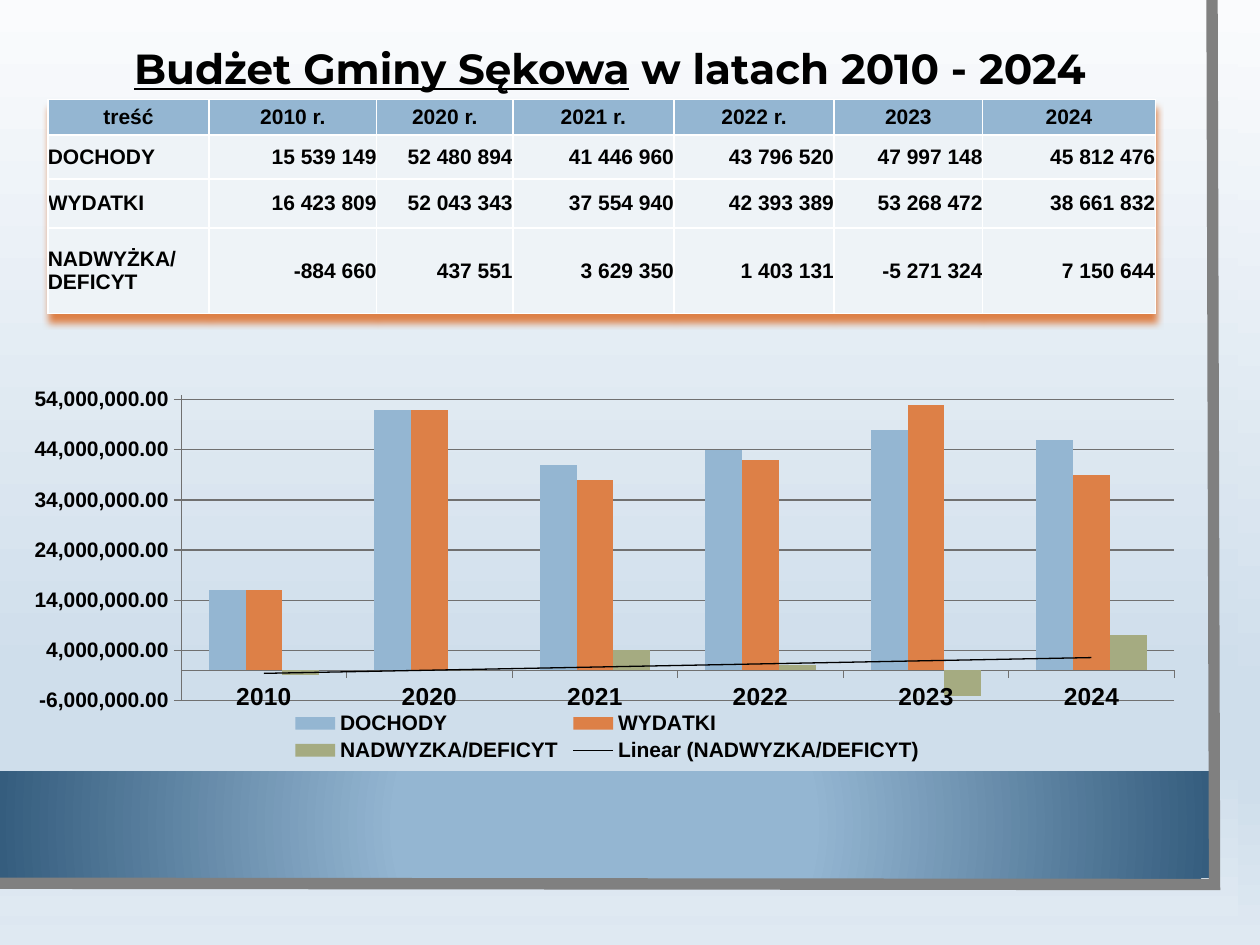
import dataclasses
import pptx
import pptx.chart.data
import pptx.dml.color
import pptx.enum.chart
import pptx.enum.shapes
import pptx.enum.text
import pptx.oxml
import pptx.oxml.ns
import pptx.util

Inches, Pt = pptx.util.Inches, pptx.util.Pt
Align = pptx.enum.text.PP_ALIGN
qn = pptx.oxml.ns.qn


@dataclasses.dataclass(frozen=True)
class Theme:
    sky: tuple = ((0, "FAFBFD"), (74, "CFDEEB"), (83, "CFDEEB"), (100, "DFE9F2"))
    band: tuple = ((0, "94B6D2"), (34, "94B6D2"), (100, "355D7E"))
    bars: tuple = ("94B6D2", "DD8047", "A5AB81")
    head: str = "94B6D2"
    body: str = "EEF3F7"
    glow: str = "DD8047"
    frame: str = "808080"
    grid: str = "707070"
    rule: str = "FFFFFF"
    ink: str = "000000"
    font: str = "Arial"
    title_font: str = "Montserrat"
    title: int = 24
    years: int = 14
    text: int = 12


THEME = Theme()
HEADS = ("treść", "2010 r.", "2020 r.", "2021 r.", "2022 r.", "2023", "2024")
YEARS = ("2010", "2020", "2021", "2022", "2023", "2024")
BUDGET = (
    ("DOCHODY", (15539149, 52480894, 41446960, 43796520, 47997148, 45812476)),
    ("WYDATKI", (16423809, 52043343, 37554940, 42393389, 53268472, 38661832)),
    ("NADWYŻKA/ DEFICYT", (-884660, 437551, 3629350, 1403131, -5271324, 7150644)),
)


def rgb(code):
    return pptx.dml.color.RGBColor.from_string(code)


def node(tag, body, attrs=""):
    """Make one XML element in the drawing or chart namespace."""
    spaces = pptx.oxml.ns.nsdecls("a", "c")
    return pptx.oxml.parse_xml(f"<{tag} {spaces} {attrs}>{body}</{tag}>")


def solid(code):
    return f'<a:solidFill><a:srgbClr val="{code}"/></a:solidFill>'


def style(font, size, name=THEME.font):
    font.name, font.size, font.bold = name, Pt(size), True
    font.color.rgb = rgb(THEME.ink)


def blend(fill, root, stops, shade):
    """Give a fill its gradient stops and its direction."""
    fill.gradient()
    grad = next(root.iter(qn("a:gradFill")))
    for child in list(grad):
        grad.remove(child)
    marks = "".join(f'<a:gs pos="{at * 1000}"><a:srgbClr val="{code}"/></a:gs>'
                    for at, code in stops)
    grad.append(node("a:gsLst", marks))
    grad.append(shade)


def down():
    return node("a:lin", "", 'ang="5400000" scaled="0"')


def panel(slide, box, stops, shade):
    kind = pptx.enum.shapes.MSO_SHAPE.RECTANGLE
    shape = slide.shapes.add_shape(kind, *box)
    shape.shadow.inherit = False
    shape.line.fill.background()
    blend(shape.fill, shape._element, stops, shade)


def backdrop(slide, box):
    left, top, width, height = box
    blend(slide.background.fill, slide._element, THEME.sky, down())
    panel(slide, (left, top, width - Inches(0.17), height - Inches(0.23)),
          THEME.sky, down())

    # Blue band along the foot
    ring = '<a:fillToRect l="50000" t="50000" r="50000" b="50000"/>'
    panel(slide, (left, top + Inches(6.12), Inches(9.6), Inches(0.85)),
          THEME.band, node("a:path", ring, 'path="circle"'))

    # Grey edge on the right and bottom
    right, base = left + Inches(9.62), top + Inches(7.02)
    path = slide.shapes.build_freeform(right, top)
    path.add_line_segments([(right + Inches(0.02), base),
                            (left - Inches(0.02), base - Inches(0.01))], close=False)
    edge = path.convert_to_shape()
    edge.shadow.inherit = False
    edge.fill.background()
    edge.line.color.rgb = rgb(THEME.frame)
    edge.line.width = Pt(6.5)
    line = next(edge._element.iter(qn("a:ln")))
    line.append(node("a:miter", "", 'lim="800000"'))


def heading(slide, box):
    frame = slide.shapes.add_textbox(*box).text_frame
    frame.word_wrap = True
    para = frame.paragraphs[0]
    para.alignment = Align.CENTER
    for text, lined in (("Budżet Gminy Sękowa", True), (" w latach 2010 - 2024", False)):
        run = para.add_run()
        run.text = text
        style(run.font, THEME.title, THEME.title_font)
        run.font.underline = lined


def dress(cell, text, fill, align):
    cell.margin_left = cell.margin_right = cell.margin_top = cell.margin_bottom = 0
    cell.vertical_anchor = pptx.enum.text.MSO_ANCHOR.MIDDLE
    cell.fill.solid()
    cell.fill.fore_color.rgb = rgb(fill)
    cell.text_frame.text = text
    para = cell.text_frame.paragraphs[0]
    para.alignment = align
    style(para.runs[0].font, THEME.text)
    props = cell._tc.get_or_add_tcPr()
    for spot, side in enumerate("LRTB"):
        props.insert(spot, node(f"a:ln{side}", solid(THEME.rule), 'w="12700"'))


def ledger(slide, box):
    rows = [HEADS] + [(name, *(f"{n:,}".replace(",", " ") for n in sums))
                      for name, sums in BUDGET]
    table = slide.shapes.add_table(len(rows), len(HEADS), *box).table
    table.horz_banding = False
    for col, width in zip(table.columns, (1.28, 1.33, 1.08, 1.28, 1.27, 1.18, 1.37)):
        col.width = Inches(width)
    for row, height in zip(table.rows, (0.28, 0.35, 0.39, 0.68)):
        row.height = Inches(height)
    for r, row in enumerate(rows):
        for c, text in enumerate(row):
            align = Align.CENTER if r == 0 else Align.RIGHT if c else Align.LEFT
            dress(table.cell(r, c), text, THEME.body if r else THEME.head, align)

    # Orange shadow under the table
    glow = (f'<a:outerShdw blurRad="50800" dist="50800" dir="5400000">'
            f'<a:srgbClr val="{THEME.glow}"/></a:outerShdw>')
    table._tbl.tblPr.insert(0, node("a:effectLst", glow))


def layout(x, y, wide, high, inner=False):
    """Make a manual layout from percentages of the chart's size."""
    target = '<c:layoutTarget val="inner"/>' if inner else ""
    modes = '<c:xMode val="edge"/><c:yMode val="edge"/>'
    spots = "".join(f'<c:{key} val="{val / 100:.3f}"/>'
                    for key, val in zip("xywh", (x, y, wide, high)))
    return node("c:layout", f"<c:manualLayout>{target}{modes}{spots}</c:manualLayout>")


def place(part, after, rule):
    """Set a manual layout, after the named child if there is one."""
    for old in part.findall(qn("c:layout")):
        part.remove(old)
    mark = part.find(qn(after)) if after else None
    part.insert(0 if mark is None else part.index(mark) + 1, rule)


def graph(slide, box):
    data = pptx.chart.data.CategoryChartData(number_format="#,##0.00")
    data.categories = YEARS
    for name, sums in BUDGET:
        data.add_series(name.replace("Ż", "Z").replace(" ", ""),
                        [round(n, -6) for n in sums])
    kind = pptx.enum.chart.XL_CHART_TYPE.COLUMN_CLUSTERED
    chart = slide.shapes.add_chart(kind, *box, data).chart
    chart.has_title = False
    style(chart.font, THEME.text)

    # Columns
    plot = chart.plots[0]
    plot.gap_width, plot.overlap, plot.vary_by_categories = 150, 0, False
    for bar, code in zip(plot.series, THEME.bars):
        bar.invert_if_negative = False
        bar.format.fill.solid()
        bar.format.fill.fore_color.rgb = rgb(code)

    # Trend of the balance
    trend = (f'<c:spPr><a:ln w="9525">{solid(THEME.ink)}</a:ln></c:spPr>'
             '<c:trendlineType val="linear"/><c:dispRSqr val="0"/><c:dispEq val="0"/>')
    last = plot.series[-1]._element
    last.find(qn("c:cat")).addprevious(node("c:trendline", trend))

    # Axes
    years, sums = chart.category_axis, chart.value_axis
    for axis, size in ((years, THEME.years), (sums, THEME.text)):
        style(axis.tick_labels.font, size)
        axis.major_tick_mark = pptx.enum.chart.XL_TICK_MARK.OUTSIDE
        axis.format.line.color.rgb = rgb(THEME.grid)
    sums.minimum_scale, sums.maximum_scale, sums.major_unit = -6e6, 55e6, 10e6
    sums.tick_labels.number_format = "#,##0.00"
    sums.tick_labels.number_format_is_linked = False
    sums.has_major_gridlines = True
    sums.major_gridlines.format.line.color.rgb = rgb(THEME.grid)

    # Legend and layout
    chart.has_legend = True
    legend = chart.legend
    legend.position = pptx.enum.chart.XL_LEGEND_POSITION.BOTTOM
    legend.include_in_layout = False
    style(legend.font, THEME.text)
    place(legend._element, "c:legendPos", layout(22.5, 85, 55, 15))
    area = next(chart._chartSpace.iter(qn("c:plotArea")))
    place(area, None, layout(13.4, 4.6, 85.3, 78.6, inner=True))


def main():
    deck = pptx.Presentation()
    deck.slide_width, deck.slide_height = Inches(10), Inches(7.5)
    slide = deck.slides.add_slide(deck.slide_layouts[6])
    backdrop(slide, (0, 0, deck.slide_width, deck.slide_height))
    heading(slide, (Inches(0.35), Inches(0.29), Inches(8.98), Inches(0.5)))
    graph(slide, (Inches(0.2), Inches(2.99), Inches(9.24), Inches(3.09)))
    ledger(slide, (Inches(0.38), Inches(0.79), Inches(8.79), Inches(1.7)))
    deck.save("out.pptx")


if __name__ == "__main__":
    main()
